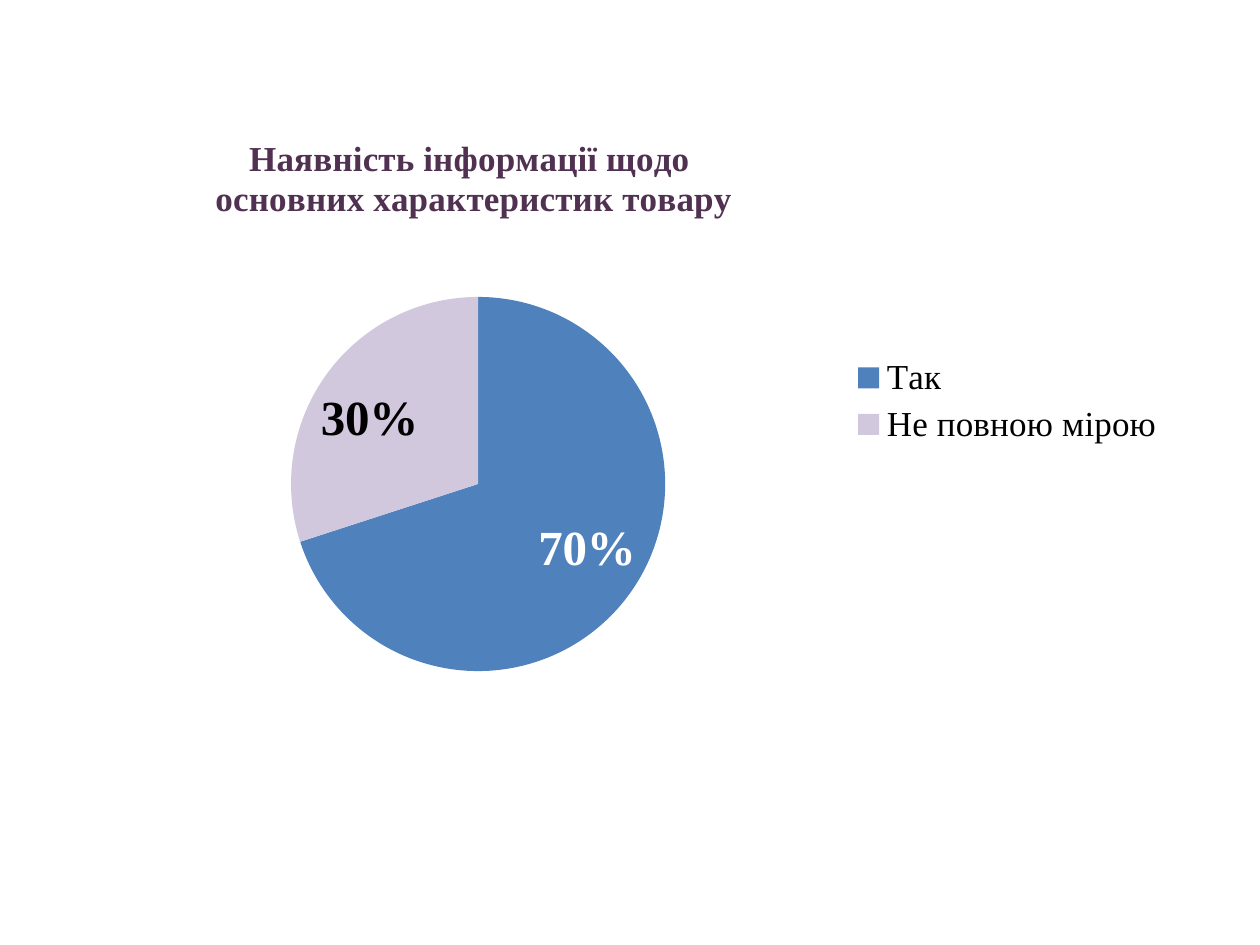
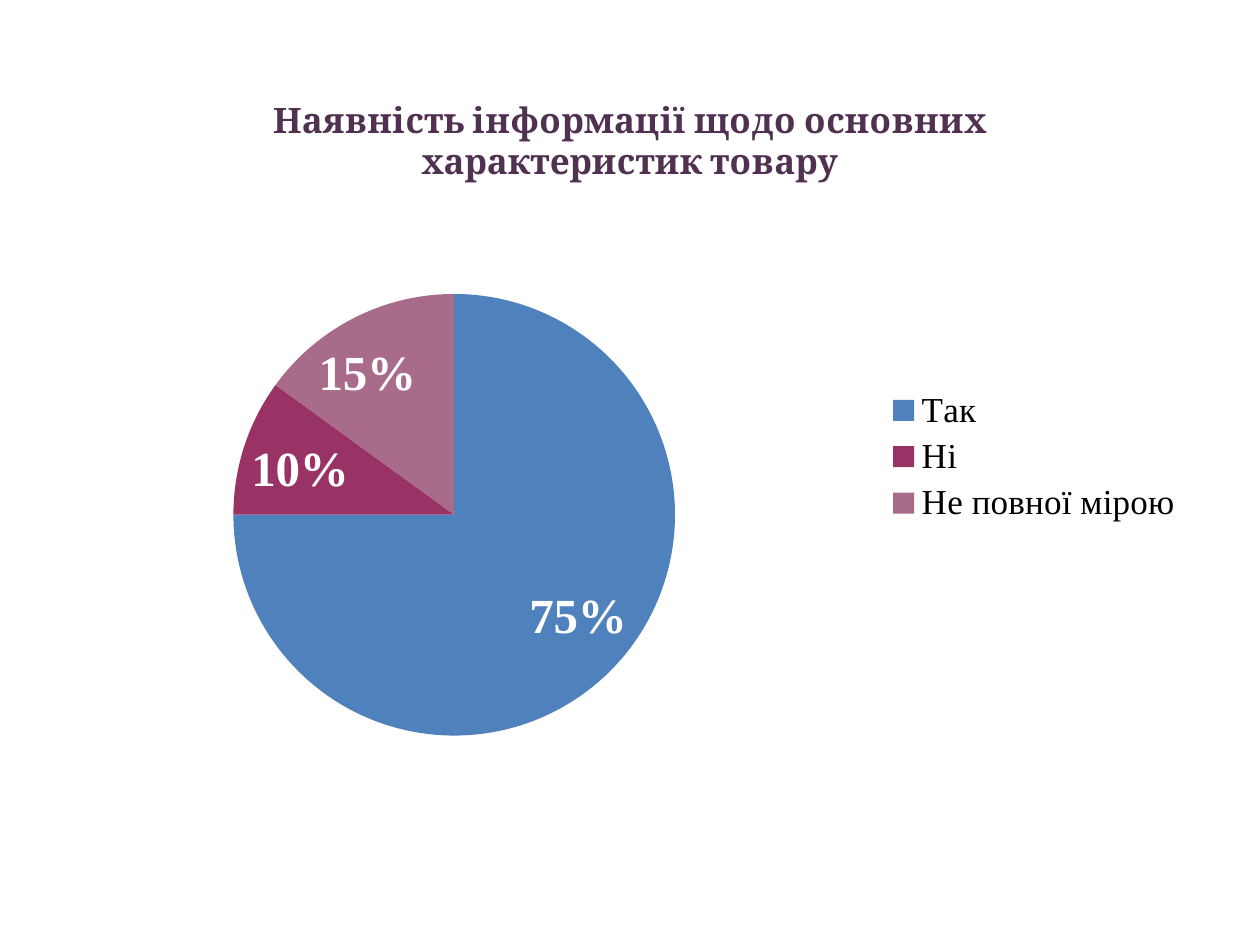
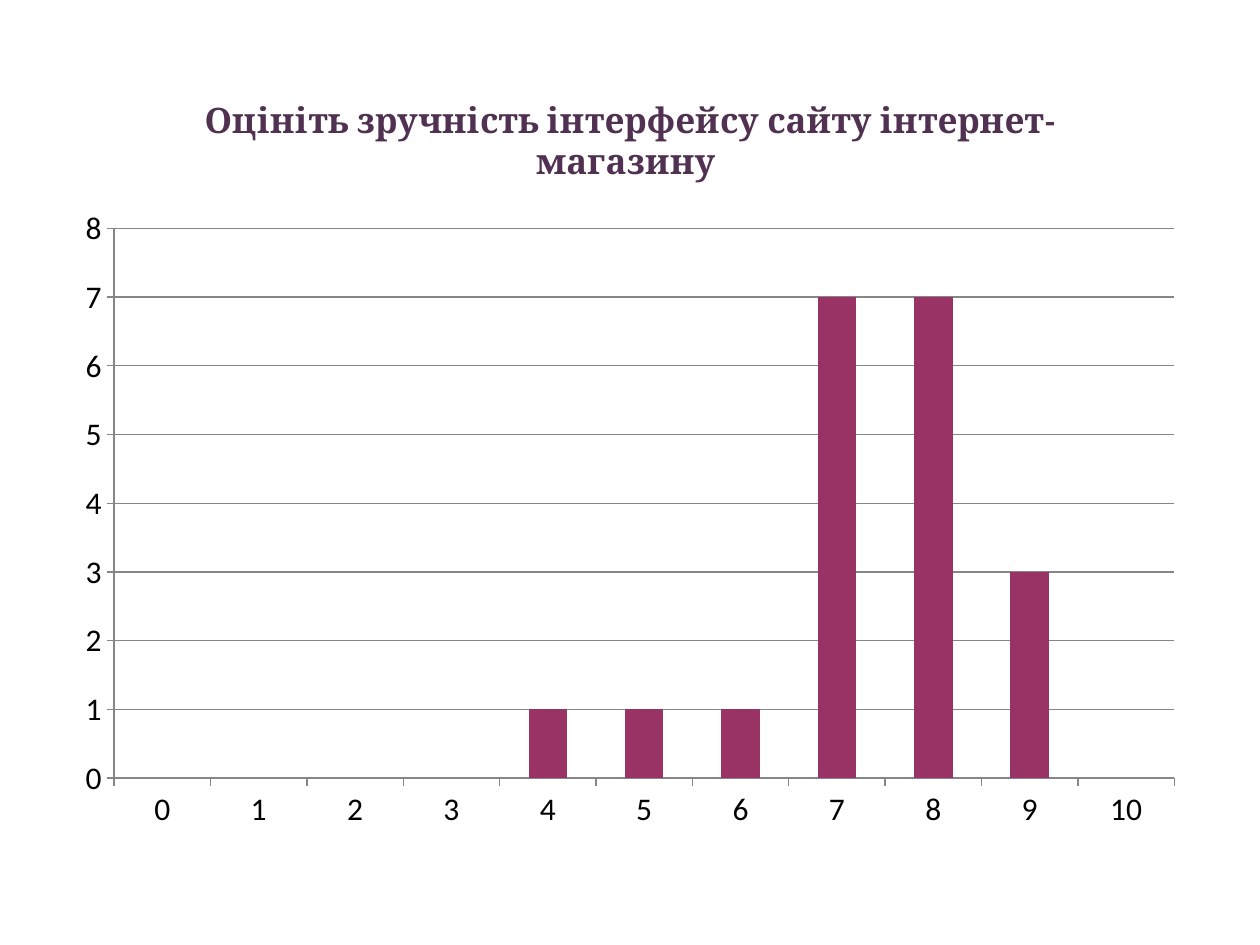
import pptx
import pptx.util
import pptx.chart.data
import pptx.dml.color
import pptx.enum.chart
import pptx.oxml
import pptx.oxml.ns

RGBColor = pptx.dml.color.RGBColor
Pt = pptx.util.Pt
ChartType = pptx.enum.chart.XL_CHART_TYPE

BLACK = RGBColor(0x00, 0x00, 0x00)
WHITE = RGBColor(0xFF, 0xFF, 0xFF)
PLUM = RGBColor(0x51, 0x31, 0x51)
BLUE = RGBColor(0x4F, 0x81, 0xBD)
LILAC = RGBColor(0xD2, 0xC8, 0xDE)
BERRY = RGBColor(0x99, 0x33, 0x66)
MAUVE = RGBColor(0xA9, 0x6B, 0x8A)
GREY = RGBColor(0x86, 0x86, 0x86)

SERIF = "Times New Roman"
TITLE_SERIF = "Cambria"
COLUMNS, ROWS = 20, 150
STANDARD_AREA = (1, 11, 18, 123)

BASE = {"name": "Calibri", "size": Pt(18), "rgb": BLACK}
TITLE = {"name": TITLE_SERIF, "size": Pt(20), "bold": True, "rgb": PLUM}
LEGEND = {"name": SERIF, "size": Pt(20), "rgb": BLACK}
LABEL = {"name": SERIF, "size": Pt(28), "bold": True, "rgb": WHITE}


class SurveyDeck:
    def __init__(self):
        self.deck = pptx.Presentation()
        self.deck.slide_width = pptx.util.Inches(10)
        self.deck.slide_height = pptx.util.Inches(7.5)
        self.page = None

    def add_page(self):
        self.page = self.deck.slides.add_slide(self.deck.slide_layouts[6])

    def set_font(self, font, style):
        for name, value in style.items():
            target = font.color if name == "rgb" else font
            setattr(target, name, value)

    def set_layout(self, parent, inner=False, **shares):
        layout = parent.find(pptx.oxml.ns.qn("c:layout"))
        if layout is None:
            layout = pptx.oxml.parse_xml(f"<c:layout {pptx.oxml.ns.nsdecls('c')}/>")
            parent.insert(0, layout)
        settings = [("layoutTarget", "inner")] if inner else []
        settings += [("xMode", "edge"), ("yMode", "edge"), *shares.items()]
        content = "".join(f'<c:{name} val="{value}"/>' for name, value in settings)
        layout.append(pptx.oxml.parse_xml(
            f"<c:manualLayout {pptx.oxml.ns.nsdecls('c')}>{content}</c:manualLayout>"))

    def add_chart(self, kind, title, series_name, values, area, title_font):
        data = pptx.chart.data.CategoryChartData()
        data.categories = list(values)
        data.add_series(series_name, list(values.values()))
        left, top, width, height = area
        column = self.deck.slide_width / COLUMNS
        row = self.deck.slide_height / ROWS
        chart = self.page.shapes.add_chart(
            kind, int(left * column), int(top * row),
            int(width * column), int(height * row), data).chart
        self.set_font(chart.font, BASE)
        chart.has_title = True
        frame = chart.chart_title.text_frame
        frame.text = title
        for para in frame.paragraphs:
            for span in para.runs:
                self.set_font(span.font, TITLE | {"name": title_font})
        return chart

    def add_pie(self, title, series_name, values, colours, plot,
                area=STANDARD_AREA, title_font=TITLE_SERIF):
        chart = self.add_chart(ChartType.PIE, title, series_name, values, area, title_font)
        self.set_layout(chart._chartSpace.chart.plotArea, inner=True, **plot)
        chart.has_legend = True
        chart.legend.position = pptx.enum.chart.XL_LEGEND_POSITION.RIGHT
        chart.legend.include_in_layout = False
        self.set_font(chart.legend.font, LEGEND)
        series = chart.plots[0].series[0]
        for index, colour in enumerate(colours):
            fill = series.points[index].format.fill
            fill.solid()
            fill.fore_color.rgb = colour
        labels = series.data_labels
        labels.show_percentage = True
        labels.show_value = False
        self.set_font(labels.font, LABEL)
        return chart

    def recolour_label(self, chart, index, colour):
        series = chart.plots[0].series[0]
        self.set_font(series.points[index].data_label.font, LABEL | {"rgb": colour})
        for tag, value in {"showVal": "0", "showPercent": "1"}.items():
            for flag in series._element.xpath(f"c:dLbls/c:dLbl/c:{tag}"):
                flag.set("val", value)

    def add_columns(self, title, values, colour):
        chart = self.add_chart(ChartType.COLUMN_CLUSTERED, title, title, values,
                               STANDARD_AREA, TITLE_SERIF)
        chart.has_legend = False
        plot = chart.plots[0]
        plot.vary_by_categories = False
        plot.gap_width = 150
        fill = plot.series[0].format.fill
        fill.solid()
        fill.fore_color.rgb = colour
        value_axis = chart.value_axis
        scale = {"minimum_scale": 0, "maximum_scale": 8, "major_unit": 1}
        for name, value in scale.items():
            setattr(value_axis, name, value)
        value_axis.has_major_gridlines = True
        for axis in (chart.category_axis, value_axis):
            axis.major_tick_mark = pptx.enum.chart.XL_TICK_MARK.OUTSIDE
            axis.minor_tick_mark = pptx.enum.chart.XL_TICK_MARK.NONE
            axis.format.line.color.rgb = GREY
        value_axis.major_gridlines.format.line.color.rgb = GREY


def main():
    survey = SurveyDeck()

    survey.add_page()
    chart = survey.add_pie(
        "Наявність інформації щодо \nосновних характеристик товару", "Series 1",
        {"Так": 70, "Не повною мірою": 30}, (BLUE, LILAC),
        {"x": 0.2, "y": 0.31, "w": 0.33, "h": 0.47},
        area=(1.02, 7.2, 18, 127.8), title_font=SERIF)
    survey.recolour_label(chart, 1, BLACK)
    survey.set_layout(chart.chart_title._element, x=0.13, y=0.11)
    survey.set_layout(chart.legend._element, x=0.69, y=0.38)

    survey.add_page()
    availability = "Наявність інформації щодо основних характеристик товару"
    survey.add_pie(
        availability, availability,
        {"Так": 75, "Ні": 10, "Не повної мірою": 15}, (BLUE, BERRY, MAUVE),
        {"x": 0.15, "y": 0.29, "w": 0.39, "h": 0.57})

    survey.add_page()
    votes = {4: 1, 5: 1, 6: 1, 7: 7, 8: 7, 9: 3}
    survey.add_columns(
        "Оцініть зручність інтерфейсу сайту інтернет-магазину ",
        {str(score): votes.get(score) for score in range(11)}, BERRY)

    survey.deck.save("out.pptx")


if __name__ == "__main__":
    main()
